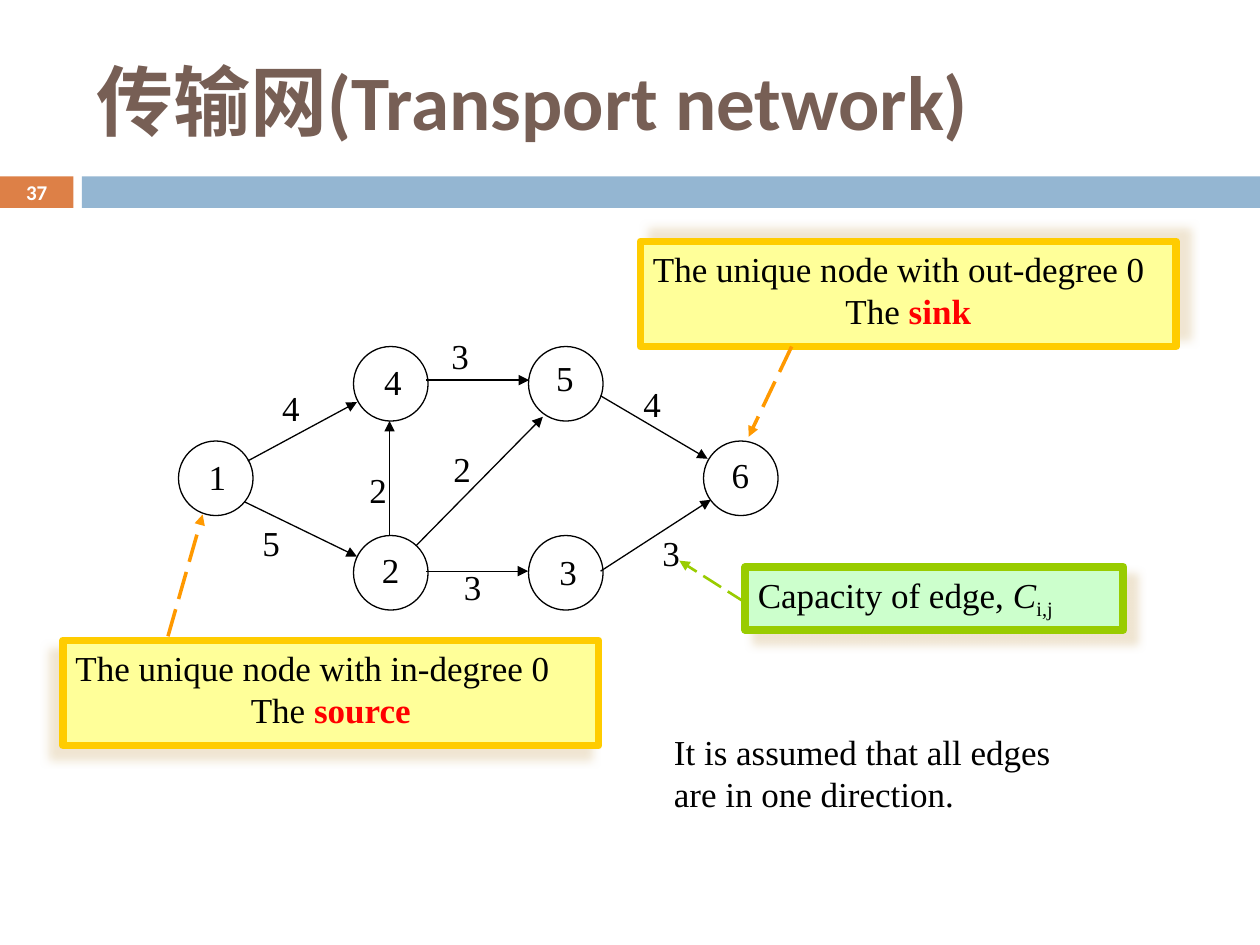
import dataclasses

import pptx
import pptx.dml.color
import pptx.enum.dml
import pptx.enum.shapes
import pptx.enum.text
import pptx.oxml
import pptx.oxml.ns
import pptx.util

SHAPE = pptx.enum.shapes.MSO_SHAPE
ALIGN = pptx.enum.text.PP_ALIGN
ANCHOR = pptx.enum.text.MSO_ANCHOR


@dataclasses.dataclass(frozen=True)
class Theme:
    heading_font: str = "Calibri"
    body_font: str = "Times New Roman"
    title_size: float = 44
    number_size: float = 12
    body_size: float = 20
    title: str = "775F55"
    white: str = "FFFFFF"
    ink: str = "000000"
    accent: str = "DD8047"
    band: str = "94B6D2"
    keyword: str = "FF0000"
    yellow: str = "FFFF99"
    gold: str = "FFCC00"
    orange: str = "FF9900"
    mint: str = "CCFFCC"
    green: str = "99CC00"
    shadow: str = "EBDDC3"


THEME = Theme()
CELL = 1 / 12  # the slide is a grid of 120 columns by 90 rows
LABEL_SIZE = (7, 5.2)
NODE_SIZE = (7.1, 7.1)
NODE_LEFT, NODE_TOP = 17, 33
NODE_COLUMN, NODE_ROW = 50 / 3, 9

# number: (column, row, label left, label top)
NODES = {
    "1": (0, 1, 18.7, 42.8),
    "2": (1, 2, 35.2, 51.6),
    "3": (2, 2, 52.1, 51.8),
    "4": (1, 0, 35.4, 33.7),
    "5": (2, 0, 51.8, 33.4),
    "6": (3, 1, 68.5, 42.6),
}
# (capacity, label position, start, end)
EDGES = [
    ("4", (25.7, 36.2), (23.6, 43.9), (34, 38.3)),
    ("5", (23.8, 49.1), (23.3, 47.8), (34, 53)),
    ("3", (41.8, 31.3), (40.6, 36.2), (50.4, 36.2)),
    ("3", (43, 53.3), (40.6, 54.4), (50.3, 54.4)),
    ("2", (42, 42), (39.6, 52), (51.7, 39.7)),
    ("4", (60.1, 35.8), (57.2, 37.7), (67.4, 43.7)),
    ("3", (61.9, 50), (57.2, 54.4), (67.7, 47.6)),
    ("2", (34, 44), (37.1, 51), (37.1, 40.1)),
]


def grid(*cells):
    return [pptx.util.Inches(cell * CELL) for cell in cells]


def color(name):
    return pptx.dml.color.RGBColor.from_string(name)


def style_font(font, name, size, ink, bold=False):
    font.name, font.size, font.bold = name, pptx.util.Pt(size), bold
    font.color.rgb = color(ink)


def add_block(page, kind, position, size, fill=None, line=None, weight=0.75):
    block = page.shapes.add_shape(kind, *grid(*position, *size))
    block.shadow.inherit = False
    if fill:
        block.fill.solid()
        block.fill.fore_color.rgb = color(fill)
    else:
        block.fill.background()
    if line:
        block.line.color.rgb = color(line)
        block.line.width = pptx.util.Pt(weight)
    else:
        block.line.fill.background()
    return block


def add_text(page, text, position, size, font=THEME.body_font, points=THEME.body_size,
             ink=THEME.ink, bold=False, align=ALIGN.LEFT, anchor=ANCHOR.TOP):
    box = page.shapes.add_textbox(*grid(*position, *size))
    frame = box.text_frame
    frame.word_wrap = True
    frame.vertical_anchor = anchor
    para = frame.paragraphs[0]
    para.text, para.alignment = text, align
    style_font(para.font, font, points, ink, bold)


def add_arrow(page, start, end, ink=THEME.ink, weight=0.75, dashed=False):
    arrow = page.shapes.add_connector(
        pptx.enum.shapes.MSO_CONNECTOR.STRAIGHT, *grid(*start, *end))
    arrow.line.color.rgb = color(ink)
    arrow.line.width = pptx.util.Pt(weight)
    if dashed:
        arrow.line.dash_style = pptx.enum.dml.MSO_LINE.LONG_DASH
    properties = arrow._element.spPr
    tip = pptx.oxml.parse_xml(
        f'<a:tailEnd {pptx.oxml.ns.nsdecls("a")} type="triangle"/>')
    arrow.line._get_or_add_ln().append(tip)
    properties.append(pptx.oxml.parse_xml(
        f'<a:effectLst {pptx.oxml.ns.nsdecls("a")}/>'))


def add_shadow(block, angle):
    effects = block._element.spPr.find(pptx.oxml.ns.qn("a:effectLst"))
    effects.append(pptx.oxml.parse_xml(
        f'<a:outerShdw {pptx.oxml.ns.nsdecls("a")} blurRad="{pptx.util.Pt(5)}" '
        f'dist="{pptx.util.Pt(8.5)}" dir="{angle * 60000}" algn="ctr" rotWithShape="0">'
        f'<a:srgbClr val="{THEME.shadow}"><a:alpha val="75000"/></a:srgbClr>'
        '</a:outerShdw>'))


def add_callout(page, position, size, fill, line, angle, lines):
    """Each line is an alignment and its (text, style) spans."""
    block = add_block(page, SHAPE.RECTANGLE, position, size, fill, line, 4.5)
    add_shadow(block, angle)
    frame = block.text_frame
    frame.word_wrap = True
    frame.vertical_anchor = ANCHOR.TOP
    for index, (align, spans) in enumerate(lines):
        para = frame.add_paragraph() if index else frame.paragraphs[0]
        para.alignment = align
        style_font(para.font, THEME.body_font, THEME.body_size, THEME.ink)
        for text, style in spans:
            span = para.add_run()
            span.text = text
            if style == "keyword":
                span.font.bold = True
                span.font.color.rgb = color(THEME.keyword)
            elif style == "italic":
                span.font.italic = True
            elif style == "subscript":
                span.font._element.set("baseline", "-25000")


def add_end_callout(page, position, angle, degree, name):
    add_callout(page, position, (51, 10), THEME.yellow, THEME.gold, angle, [
        (ALIGN.LEFT, [(f"The unique node with {degree} 0", None)]),
        (ALIGN.CENTER, [("The ", None), (name, "keyword")]),
    ])


def add_header(page):
    add_block(page, SHAPE.RECTANGLE, (0, 16.8), (7, 3), THEME.accent)
    add_block(page, SHAPE.RECTANGLE, (7.8, 16.8), (112.2, 3), THEME.band)
    add_text(page, "传输网(Transport network)", (8, 3), (107, 13), THEME.heading_font,
             THEME.title_size, THEME.title, True, anchor=ANCHOR.MIDDLE)
    add_text(page, "37", (0, 16.7), (7, 3.2), THEME.heading_font, THEME.number_size,
             THEME.white, True, ALIGN.CENTER, ANCHOR.MIDDLE)


def add_network(page):
    for number, (column, row, left, top) in NODES.items():
        position = (NODE_LEFT + column * NODE_COLUMN, NODE_TOP + row * NODE_ROW)
        add_block(page, SHAPE.OVAL, position, NODE_SIZE, line=THEME.ink)
        add_text(page, number, (left, top), LABEL_SIZE)
    for capacity, label, start, end in EDGES:
        add_arrow(page, start, end)
        add_text(page, capacity, label, LABEL_SIZE)


def main():
    deck = pptx.Presentation()
    deck.slide_width, deck.slide_height = grid(120, 90)
    page = deck.slides.add_slide(deck.slide_layouts[6])

    add_header(page)
    add_network(page)

    # Source and sink
    add_end_callout(page, (6, 61), 135, "in-degree", "source")
    add_arrow(page, (16, 60.6), (19.3, 49), THEME.orange, 2, True)
    add_end_callout(page, (61, 23), 315, "out-degree", "sink")
    add_arrow(page, (75.4, 33), (71.3, 41.6), THEME.orange, 2, True)

    # Edge capacity
    add_callout(page, (71, 54), (36, 6), THEME.mint, THEME.green, 45, [
        (ALIGN.LEFT, [("Capacity of edge, ", None), ("C", "italic"), ("i,j", "subscript")]),
    ])
    add_arrow(page, (71, 57.4), (64.7, 53.4), THEME.green, 1.5, True)

    # Assumption
    add_text(page, "It is assumed that all edges are in one direction.", (63, 69), (39, 9.2))
    deck.save("out.pptx")


if __name__ == "__main__":
    main()
